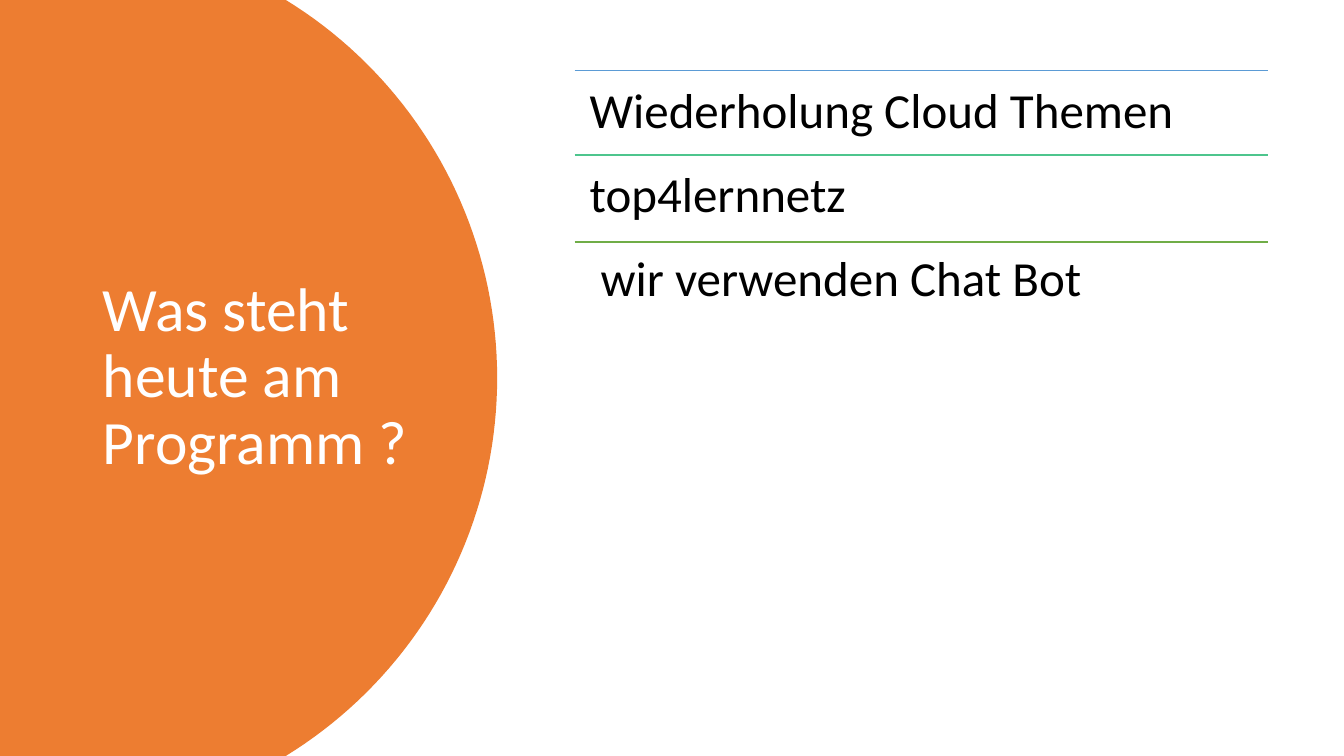
"""Agenda slide with a round orange title panel and a ruled list of topics."""
import math

import pptx
import pptx.dml.color
import pptx.enum.shapes
import pptx.enum.text
import pptx.oxml.ns
import pptx.util
from lxml import etree

Cm = pptx.util.Cm
RGB = pptx.dml.color.RGBColor
ANCHOR = pptx.enum.text.MSO_ANCHOR

ORANGE = RGB(0xED, 0x7D, 0x31)
WHITE = RGB(0xFF, 0xFF, 0xFF)
BLACK = RGB(0x00, 0x00, 0x00)
BLUE = RGB(0x5B, 0x9B, 0xD5)
TEAL = RGB(0x4D, 0xC5, 0x8D)
GREEN = RGB(0x70, 0xAD, 0x47)

deck = pptx.Presentation()
deck.slide_width = Cm(33.87)
deck.slide_height = Cm(19.05)
slide = deck.slides.add_slide(deck.slide_layouts[6])


def add_text(text, left, top, width, height, size, color, anchor):
    box = slide.shapes.add_textbox(Cm(left), Cm(top), Cm(width), Cm(height))
    frame = box.text_frame
    frame.word_wrap = True
    frame.vertical_anchor = anchor
    para = frame.paragraphs[0]
    para.line_spacing = 0.9
    run = para.add_run()
    run.text = text
    run.font.name = "Calibri"
    run.font.size = pptx.util.Pt(size)
    run.font.color.rgb = color
    return frame


radius = 11.18
center = 1.35
middle = 19.05 / 2
limit = math.asin(middle / radius)
steps = 80
arc = []
for step in range(steps + 1):
    angle = limit * (2 * step / steps - 1)
    x = center + radius * math.cos(angle)
    y = middle + radius * math.sin(angle)
    arc.append((Cm(x), Cm(y)))

outline = slide.shapes.build_freeform(0, 0)
outline.add_line_segments(arc + [(0, Cm(19.05))], close=True)
panel = outline.convert_to_shape()
panel.shadow.inherit = False
panel.fill.solid()
panel.fill.fore_color.rgb = ORANGE
panel.line.fill.background()

add_text("Was steht heute am Programm ?", 2.34, 1.78, 8.2, 15.47,
         44, WHITE, ANCHOR.MIDDLE)

left = 14.48
width = 17.48
inset = 0.38
topics = [
    ("Wiederholung Cloud Themen", BLUE, 1.78, 1.78, 2.12, 0),
    ("top4lernnetz", TEAL, 3.91, 3.91, 2.12, 0),
    ("wir verwenden Chat Bot", GREEN, 6.1, 6.02, 5.03, 0.28),
]
for text, color, level, top, height, indent in topics:
    rule = slide.shapes.add_connector(
        pptx.enum.shapes.MSO_CONNECTOR.STRAIGHT,
        Cm(left), Cm(level), Cm(left + width), Cm(level))
    rule.line.color.rgb = color
    rule.line.width = pptx.util.Pt(1)
    etree.SubElement(rule.element.spPr, pptx.oxml.ns.qn("a:effectLst"))
    frame = add_text(text, left, top, width, height, 35, BLACK, ANCHOR.TOP)
    frame.margin_left = Cm(inset + indent)
    frame.margin_top = frame.margin_right = frame.margin_bottom = Cm(inset)

deck.save("out.pptx")
